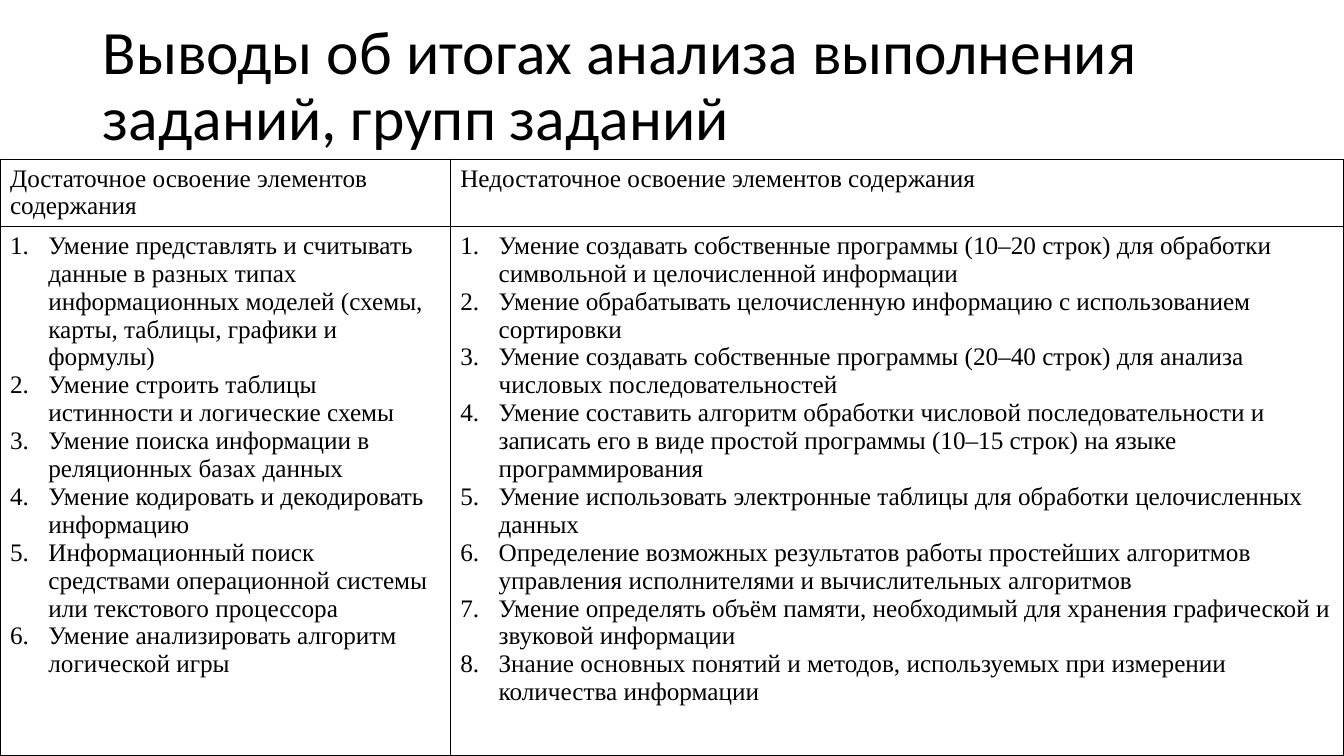
"""Build the slide that sums up which content elements were mastered and which were not."""
from dataclasses import dataclass

from lxml import etree
from pptx import Presentation
from pptx import util as u
from pptx.dml.color import RGBColor
from pptx.enum import text
from pptx.oxml.ns import qn

WIDTH, HEIGHT = u.Inches(13.33), u.Inches(7.5)


@dataclass(frozen=True)
class Theme:
    ink: str = "000000"
    title_font: str = "Calibri"
    body_font: str = "Times New Roman"
    title_size: int = 44
    body_size: int = 18
    border: float = 1
    indent: float = 0.38


@dataclass(frozen=True)
class Box:
    left: float
    top: float
    width: float
    height: float

    def emu(self) -> dict[str, int]:
        return {
            "left": int(self.left * WIDTH),
            "top": int(self.top * HEIGHT),
            "width": int(self.width * WIDTH),
            "height": int(self.height * HEIGHT),
        }


@dataclass(frozen=True)
class Column:
    share: float
    heading: str
    skills: tuple[str, ...]


THEME = Theme()
TITLE = "Выводы об итогах анализа выполнения заданий, групп заданий"
TITLE_BOX = Box(0.069, 0.019, 0.8625, 0.193)
TABLE_BOX = Box(0, 0.211, 1, 0.789)
ROW_SHARES = (0.089, 0.7)
COLUMNS = (
    Column(0.335, "Достаточное освоение элементов содержания", (
        "Умение представлять и считывать данные в разных типах информационных моделей "
        "(схемы, карты, таблицы, графики и формулы)",
        "Умение строить таблицы истинности и логические схемы",
        "Умение поиска информации в реляционных базах данных",
        "Умение кодировать и декодировать информацию",
        "Информационный поиск средствами операционной системы или текстового процессора",
        "Умение анализировать алгоритм логической игры",
    )),
    Column(0.665, "Недостаточное освоение элементов содержания", (
        "Умение создавать собственные программы (10–20 строк) для обработки символьной "
        "и целочисленной информации",
        "Умение обрабатывать целочисленную информацию с использованием сортировки",
        "Умение создавать собственные программы (20–40 строк) для анализа числовых "
        "последовательностей",
        "Умение составить алгоритм обработки числовой последовательности и записать его "
        "в виде простой программы (10–15 строк) на языке программирования",
        "Умение использовать электронные таблицы для обработки целочисленных данных",
        "Определение возможных результатов работы простейших алгоритмов управления "
        "исполнителями и вычислительных алгоритмов",
        "Умение определять объём памяти, необходимый для хранения графической "
        "и звуковой информации",
        "Знание основных понятий и методов, используемых при измерении количества "
        "информации",
    )),
)


def apply(target, values: dict) -> None:
    for name, value in values.items():
        setattr(target, name, value)


def write(p, content: str, font: str, size: int) -> None:
    r = p.add_run()
    r.text = content
    apply(r.font, {"name": font, "size": u.Pt(size), "bold": False})
    r.font.color.rgb = RGBColor.from_string(THEME.ink)


def number(p) -> None:
    pPr = p._p.get_or_add_pPr()
    indent = u.Inches(THEME.indent)
    pPr.set("marL", str(indent))
    pPr.set("indent", str(-indent))
    etree.SubElement(pPr, qn("a:buAutoNum"), type="arabicPeriod")


def outline(cell) -> None:
    tcPr = cell._tc.get_or_add_tcPr()
    for side in ("lnL", "lnR", "lnT", "lnB"):
        ln = etree.SubElement(tcPr, qn(f"a:{side}"), w=str(u.Pt(THEME.border)))
        fill = etree.SubElement(ln, qn("a:solidFill"))
        etree.SubElement(fill, qn("a:srgbClr"), val=THEME.ink)
    cell.fill.background()


def fill_cell(cell, lines: tuple[str, ...], numbered: bool) -> None:
    outline(cell)
    tf = cell.text_frame
    for i, line in enumerate(lines):
        p = tf.add_paragraph() if i else tf.paragraphs[0]
        if numbered:
            number(p)
        write(p, line, THEME.body_font, THEME.body_size)


def add_title(s) -> None:
    sp = s.shapes.title
    apply(sp, TITLE_BOX.emu())
    tf = sp.text_frame
    apply(tf, {
        "word_wrap": True,
        "auto_size": text.MSO_AUTO_SIZE.NONE,
        "vertical_anchor": text.MSO_ANCHOR.MIDDLE,
    })
    p = tf.paragraphs[0]
    apply(p, {"alignment": text.PP_ALIGN.LEFT, "line_spacing": 0.9})
    write(p, TITLE, THEME.title_font, THEME.title_size)


def add_skills_table(s) -> None:
    table = s.shapes.add_table(len(ROW_SHARES), len(COLUMNS), **TABLE_BOX.emu()).table
    apply(table, {"first_row": False, "horz_banding": False})
    for row, share in zip(table.rows, ROW_SHARES):
        row.height = int(share * HEIGHT)
    for i, column in enumerate(COLUMNS):
        table.columns[i].width = int(column.share * WIDTH)
        fill_cell(table.cell(0, i), (column.heading,), numbered=False)
        fill_cell(table.cell(1, i), column.skills, numbered=True)


def main() -> None:
    prs = Presentation()
    apply(prs, {"slide_width": WIDTH, "slide_height": HEIGHT})
    s = prs.slides.add_slide(prs.slide_layouts.get_by_name("Title Only"))
    add_title(s)
    add_skills_table(s)
    prs.save("out.pptx")


if __name__ == "__main__":
    main()
